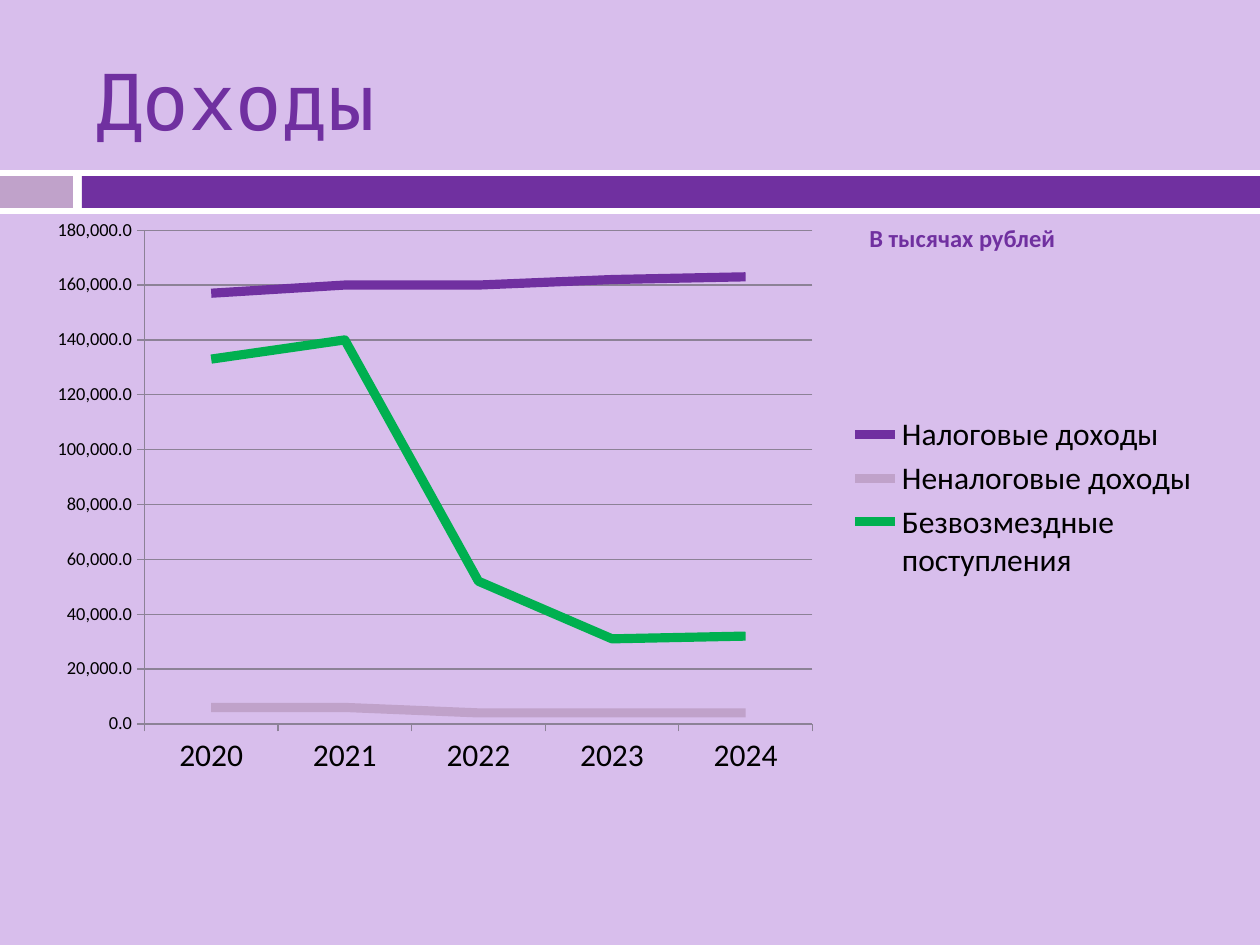
from dataclasses import dataclass

from lxml.etree import SubElement
from pptx import Presentation
from pptx.chart.data import CategoryChartData as ChartData
from pptx.dml.color import RGBColor as Rgb
from pptx.enum.chart import XL_CHART_TYPE as Kind
from pptx.enum.chart import XL_LEGEND_POSITION as Side
from pptx.enum.chart import XL_TICK_MARK as Tick
from pptx.enum.shapes import MSO_SHAPE as Shape
from pptx.enum.text import MSO_ANCHOR as Anchor
from pptx.enum.text import PP_ALIGN as Align
from pptx.oxml.ns import qn
from pptx.util import Emu, Pt


@dataclass(frozen=True)
class Theme:
    back: str = "D8BEEC"
    white: str = "FFFFFF"
    main: str = "7030A0"
    pale: str = "C0A2CA"
    green: str = "00B050"
    grid: str = "8C8296"
    ink: str = "000000"
    head: str = "DejaVu Sans Mono"
    body: str = "Calibri"
    title: float = 44
    note: float = 14
    label: float = 18
    scale: float = 10.5
    line: float = 5.25


THEME = Theme()
YEARS = ["2020", "2021", "2022", "2023", "2024"]
INCOME = [
    ("Налоговые доходы", THEME.main, [157000, 160000, 160000, 162000, 163000]),
    ("Неналоговые доходы", THEME.pale, [6000, 6000, 4000, 4000, 4000]),
    ("Безвозмездные поступления", THEME.green,
     [133000, 140000, 52000, 31000, 32000]),
]
BARS = [
    ((0, 170, 1260, 44), THEME.white),
    ((0, 176, 73, 32), THEME.pale),
    ((82, 176, 1178, 32), THEME.main),
]


def px(num):
    return Emu(round(num * 914400 / 126))


def rgb(code):
    return Rgb.from_string(code)


def style(font, face, size, color, bold=False):
    font.name, font.size, font.bold = face, Pt(size), bold
    font.color.rgb = rgb(color)


def add_bar(slide, box, color):
    bar = slide.shapes.add_shape(Shape.RECTANGLE, *map(px, box))
    bar.shadow.inherit = False
    bar.fill.solid()
    bar.fill.fore_color.rgb = rgb(color)
    bar.line.fill.background()


def set_title(slide, text):
    title = slide.shapes.title
    title.left, title.top, title.width, title.height = map(
        px, (84, 32, 1124, 136))
    frame = title.text_frame
    frame.text = text
    frame.vertical_anchor = Anchor.MIDDLE
    para = frame.paragraphs[0]
    para.alignment = Align.LEFT
    style(para.runs[0].font, THEME.head, THEME.title, THEME.main)


def add_note(slide, text, box):
    frame = slide.shapes.add_textbox(*map(px, box)).text_frame
    frame.word_wrap = True
    frame.text = text
    style(frame.paragraphs[0].runs[0].font,
          THEME.body, THEME.note, THEME.main, True)


def place(node, box, inner=False):
    """Fix a chart part at fractions of the chart's width and height."""
    layout = node.find(qn("c:layout"))
    if layout is None:
        layout = SubElement(node, qn("c:layout"))
        node.remove(layout)
        where = 0 if inner else 1
        node.insert(where, layout)
    manual = SubElement(layout, qn("c:manualLayout"))
    if inner:
        SubElement(manual, qn("c:layoutTarget")).set("val", "inner")
    for key in ("xMode", "yMode"):
        SubElement(manual, qn(f"c:{key}")).set("val", "edge")
    for key, val in zip("xywh", box):
        SubElement(manual, qn(f"c:{key}")).set("val", str(val))


def style_axes(chart):
    value, years = chart.value_axis, chart.category_axis
    value.minimum_scale, value.maximum_scale = 0, 180000
    value.major_unit = 20000
    value.has_major_gridlines = True
    labels = value.tick_labels
    labels.number_format, labels.number_format_is_linked = "#,##0.0", False
    style(labels.font, THEME.body, THEME.scale, THEME.ink)
    for axis in (value, years):
        axis.major_tick_mark, axis.minor_tick_mark = Tick.OUTSIDE, Tick.NONE
    for part in (value, years, value.major_gridlines):
        part.format.line.color.rgb = rgb(THEME.grid)
        part.format.line.width = Pt(0.75)


def add_lines(slide, box):
    data = ChartData(number_format="#,##0.0")
    data.categories = YEARS
    for name, _, vals in INCOME:
        data.add_series(name, vals)
    chart = slide.shapes.add_chart(Kind.LINE, *map(px, box), data).chart
    chart.has_title = False
    style(chart.font, THEME.body, THEME.label, THEME.ink)
    plot = chart.plots[0]
    plot.vary_by_categories = False
    for series, (_, color, _) in zip(plot.series, INCOME):
        series.smooth = False
        series.format.line.color.rgb = rgb(color)
        series.format.line.width = Pt(THEME.line)
    style_axes(chart)
    chart.has_legend = True
    legend = chart.legend
    legend.position, legend.include_in_layout = Side.RIGHT, False
    root = chart.element
    place(root.find(".//" + qn("c:plotArea")), (0.09, 0.04, 0.57, 0.85), True)
    place(root.find(".//" + qn("c:legend")), (0.69, 0.35, 0.3, 0.3))


def main():
    deck = Presentation()
    deck.slide_width, deck.slide_height = px(1260), px(945)
    slide = deck.slides.add_slide(deck.slide_layouts[5])
    fill = slide.background.fill
    fill.solid()
    fill.fore_color.rgb = rgb(THEME.back)
    for box, color in BARS:
        add_bar(slide, box, color)
    set_title(slide, "Доходы")
    add_lines(slide, (39, 207, 1172, 581))
    add_note(slide, "В тысячах рублей", (857, 217, 286, 59))
    deck.save("out.pptx")


if __name__ == "__main__":
    main()
